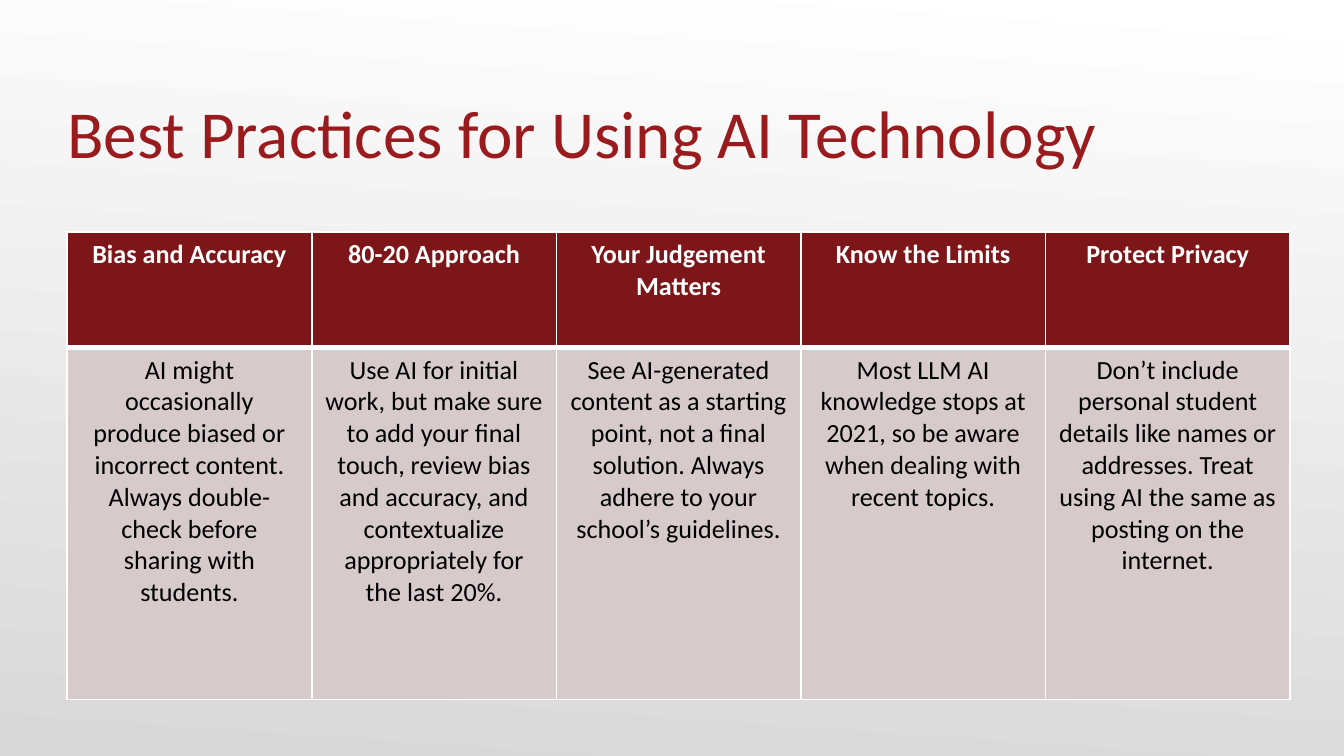
from dataclasses import dataclass

from lxml.etree import SubElement
from pptx import Presentation
from pptx.dml.color import RGBColor
from pptx.enum.text import MSO_ANCHOR, PP_ALIGN
from pptx.oxml.ns import qn
from pptx.slide import Slide
from pptx.table import _Cell
from pptx.util import Cm, Pt

FONT = "Calibri"
COLORS = {
    "title": "991B1E",
    "header": "7D1619",
    "body": "D6CACB",
    "white": "FFFFFF",
    "black": "000000",
    "shade": "D8D8D8",
}


@dataclass(frozen=True)
class Practice:
    heading: str
    advice: str


@dataclass(frozen=True)
class CellStyle:
    fill: str
    text: str
    bold: bool
    top: float
    bottom: float


HEADER = CellStyle("header", "white", True, 1, 3)
BODY = CellStyle("body", "black", False, 3, 1)

PRACTICES = [
    Practice(
        "Bias and Accuracy",
        "AI might occasionally produce biased or incorrect content. "
        "Always double-check before sharing with students.",
    ),
    Practice(
        "80-20 Approach",
        "Use AI for initial work, but make sure to add your final touch, review bias "
        "and accuracy, and contextualize appropriately for the last 20%.",
    ),
    Practice(
        "Your Judgement Matters",
        "See AI-generated content as a starting point, not a final solution. "
        "Always adhere to your school’s guidelines.",
    ),
    Practice(
        "Know the Limits",
        "Most LLM AI knowledge stops at 2021, so be aware when dealing with recent topics.",
    ),
    Practice(
        "Protect Privacy",
        "Don’t include personal student details like names or addresses. "
        "Treat using AI the same as posting on the internet.",
    ),
]


def rgb(name: str) -> RGBColor:
    return RGBColor.from_string(COLORS[name])


def set_background(s: Slide) -> None:
    fill = s.background.fill
    fill.gradient()
    fill.gradient_angle = 266
    for stop, name in zip(fill.gradient_stops, ("white", "shade")):
        stop.color.rgb = rgb(name)


def add_title(s: Slide, text: str) -> None:
    sp = s.shapes.add_textbox(Cm(1.27), Cm(0.86), Cm(22.86), Cm(2.39))
    tf = sp.text_frame
    tf.word_wrap = True
    tf.vertical_anchor = MSO_ANCHOR.BOTTOM
    tf.margin_left = tf.margin_right = tf.margin_bottom = 0
    p = tf.paragraphs[0]
    p.text = text
    p.font.name = FONT
    p.font.size = Pt(36)
    p.font.color.rgb = rgb("title")


def add_border(cell: _Cell, side: str, width: float) -> None:
    tc_pr = cell._tc.get_or_add_tcPr()
    ln = SubElement(tc_pr, qn(f"a:ln{side}"), w=str(Pt(width)))
    fill = SubElement(ln, qn("a:solidFill"))
    SubElement(fill, qn("a:srgbClr"), val=COLORS["white"])


def fill_cell(cell: _Cell, text: str, style: CellStyle) -> None:
    for side, width in (("L", 1), ("R", 1), ("T", style.top), ("B", style.bottom)):
        add_border(cell, side, width)
    cell.fill.solid()
    cell.fill.fore_color.rgb = rgb(style.fill)
    p = cell.text_frame.paragraphs[0]
    p.text = text
    p.alignment = PP_ALIGN.CENTER
    p.font.name = FONT
    p.font.size = Pt(14)
    p.font.bold = style.bold
    p.font.color.rgb = rgb(style.text)


def add_practices(s: Slide, practices: list[Practice]) -> None:
    frame = s.shapes.add_table(
        2, len(practices), Cm(1.27), Cm(4.39), Cm(23.11), Cm(8.83)
    )
    table = frame.table
    table.rows[0].height = Cm(2.18)
    table.rows[1].height = Cm(6.65)
    for col, practice in enumerate(practices):
        fill_cell(table.cell(0, col), practice.heading, HEADER)
        fill_cell(table.cell(1, col), practice.advice, BODY)


def main() -> None:
    prs = Presentation()
    prs.slide_width = Cm(25.4)
    prs.slide_height = Cm(14.29)
    s = prs.slides.add_slide(prs.slide_layouts[6])
    set_background(s)
    add_title(s, "Best Practices for Using AI Technology")
    add_practices(s, PRACTICES)
    prs.save("out.pptx")


if __name__ == "__main__":
    main()
